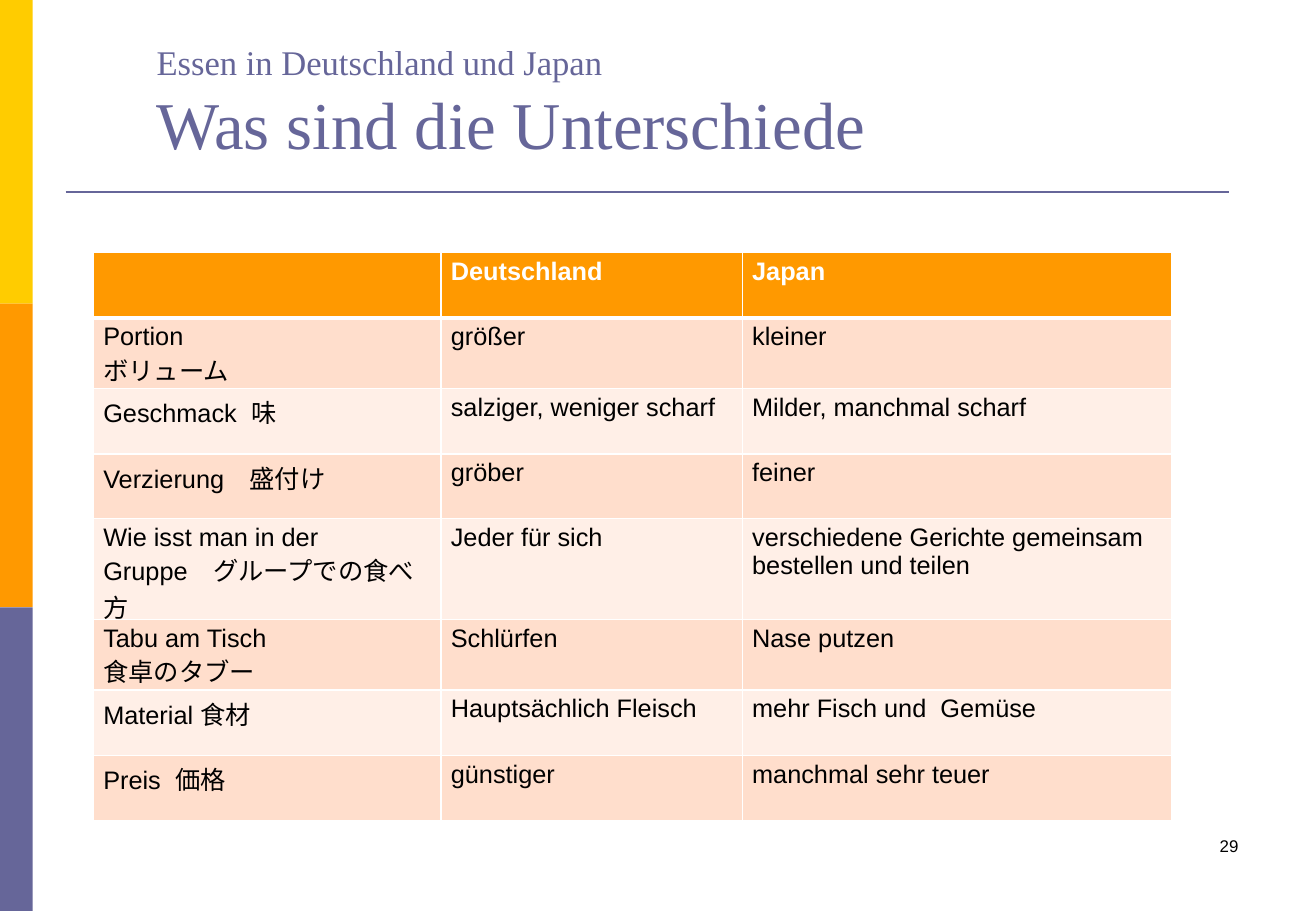
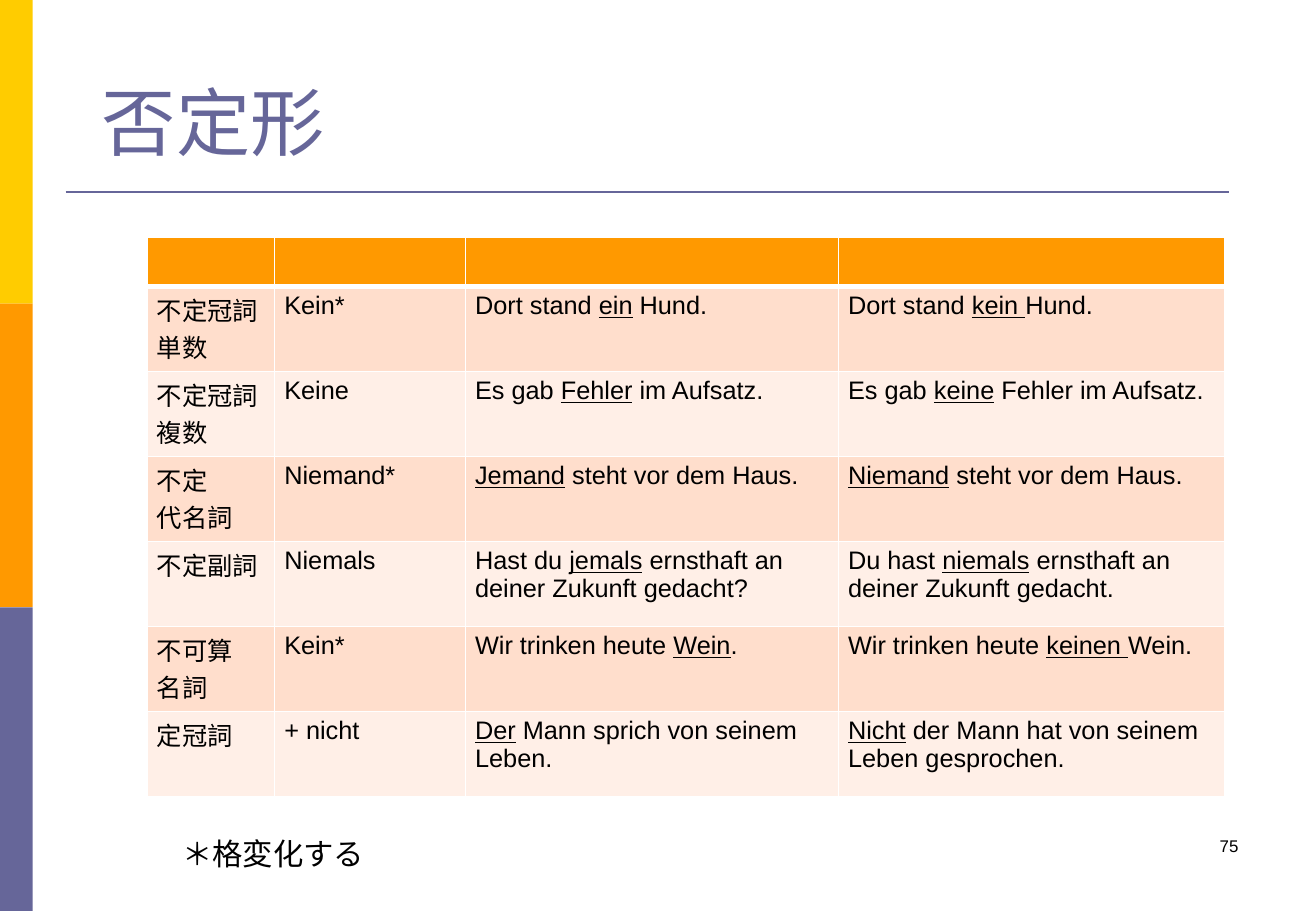
from lxml import etree
from pptx import Presentation
from pptx.dml.color import RGBColor
from pptx.enum import shapes, text
from pptx.oxml import ns
from pptx.util import Inches, Pt

COLORS = {
    "yellow": "FFCC00",
    "orange": "FF9900",
    "violet": "666699",
    "peach": "FFDECC",
    "cream": "FFEFE7",
    "white": "FFFFFF",
    "black": "000000",
}
BODY_FONT = "Arial"
BLANK_LAYOUT = 6
SLIDE_WIDTH, SLIDE_HEIGHT = 10.83, 7.5
BAND_WIDTH = 0.27

FOOD_ROWS = [
    ["", "Deutschland", "Japan"],
    ["Portion\nボリューム", "größer", "kleiner"],
    ["Geschmack  味", "salziger, weniger scharf", "Milder, manchmal scharf"],
    ["Verzierung　盛付け", "gröber", "feiner"],
    ["Wie isst man in der Gruppe　グループでの食べ方", "Jeder für sich",
     "verschiedene Gerichte gemeinsam bestellen und teilen"],
    ["Tabu am Tisch\n食卓のタブー", "Schlürfen", "Nase putzen"],
    ["Material 食材", "Hauptsächlich Fleisch", "mehr Fisch und  Gemüse"],
    ["Preis  価格", "günstiger", "manchmal sehr teuer"],
]

# Underscores enclose underlined words
NEGATION_ROWS = [
    ["", "", "", ""],
    ["不定冠詞単数", "Kein*", "Dort stand _ein_ Hund.", "Dort stand _kein _Hund."],
    ["不定冠詞複数", "Keine", "Es gab _Fehler_ im Aufsatz.",
     "Es gab _keine_ Fehler im Aufsatz."],
    ["不定\n代名詞", "Niemand*", "_Jemand_ steht vor dem Haus.",
     "_Niemand_ steht vor dem Haus."],
    ["不定副詞", "Niemals", "Hast du _jemals_ ernsthaft an deiner Zukunft gedacht?",
     "Du hast _niemals_ ernsthaft an deiner Zukunft gedacht."],
    ["不可算\n名詞", "Kein*", "Wir trinken heute _Wein_.",
     "Wir trinken heute _keinen _Wein."],
    ["定冠詞", "+ nicht", "_Der_ Mann sprich von seinem Leben.",
     "_Nicht_ der Mann hat von seinem Leben gesprochen."],
]


def rgb(name):
    return RGBColor.from_string(COLORS[name])


def style_font(font, color, size=None, name=BODY_FONT):
    font.name = name
    font.color.rgb = rgb(color)
    if size:
        font.size = Pt(size)


def add_text_box(page, box, anchor=text.MSO_ANCHOR.TOP):
    """Add a wrapping text box and return its first paragraph."""
    frame = page.shapes.add_textbox(*map(Inches, box)).text_frame
    frame.word_wrap = True
    frame.vertical_anchor = anchor
    return frame.paragraphs[0]


def add_background(page):
    # Three stacked bands on the left edge
    height = SLIDE_HEIGHT / 3
    for index, color in enumerate(("yellow", "orange", "violet")):
        band = page.shapes.add_shape(
            shapes.MSO_SHAPE.RECTANGLE, 0, Inches(index * height),
            Inches(BAND_WIDTH), Inches(height))
        band.shadow.inherit = False
        band.fill.solid()
        band.fill.fore_color.rgb = rgb(color)
        band.line.fill.background()

    # Rule below the title
    rule = page.shapes.add_connector(
        shapes.MSO_CONNECTOR.STRAIGHT,
        Inches(0.54), Inches(1.58), Inches(10.11), Inches(1.58))
    rule.line.color.rgb = rgb("violet")
    rule.line.width = Pt(1.5)
    etree.SubElement(rule._element.spPr, ns.qn("a:effectLst"))


def add_title(page, box, lines, font_name):
    """Lines are (wording, size) pairs in one paragraph."""
    para = add_text_box(page, box, text.MSO_ANCHOR.BOTTOM)
    style_font(para.font, "violet", name=font_name)
    for index, (wording, size) in enumerate(lines):
        if index:
            para.add_line_break()
        span = para.add_run()
        span.text = wording
        span.font.size = Pt(size)


def add_page_number(page, number):
    para = add_text_box(page, (7.76, 6.83, 2.53, 0.5))
    para.text = str(number)
    para.alignment = text.PP_ALIGN.RIGHT
    style_font(para.font, "black", 10)


def set_borders(cell, widths):
    properties = cell._tc.get_or_add_tcPr()
    for side, width in widths.items():
        line = etree.SubElement(
            properties, ns.qn(f"a:ln{side}"), w=str(Pt(width)))
        fill = etree.SubElement(line, ns.qn("a:solidFill"))
        etree.SubElement(fill, ns.qn("a:srgbClr"), val=COLORS["white"])


def fill_cell(cell, wording, row_index):
    header = row_index == 0
    set_borders(cell, {"L": 1, "R": 1, "T": 3 if row_index == 1 else 1,
                       "B": 3 if header else 1})
    cell.fill.solid()
    cell.fill.fore_color.rgb = rgb(
        "orange" if header else "peach" if row_index % 2 else "cream")
    cell.margin_left = cell.margin_right = Inches(0.08)
    cell.margin_top = cell.margin_bottom = Inches(0.04)
    if not wording:
        return

    for index, line in enumerate(wording.split("\n")):
        frame = cell.text_frame
        para = frame.add_paragraph() if index else frame.paragraphs[0]
        style_font(para.font, "white" if header else "black", 15)
        para.font.bold = header
        for position, part in enumerate(line.split("_")):
            if part:
                span = para.add_run()
                span.text = part
                if position % 2:
                    span.font.underline = True


def add_grid(page, left, top, columns, heights, rows):
    table = page.shapes.add_table(
        len(rows), len(columns), Inches(left), Inches(top),
        Inches(sum(columns)), Inches(sum(heights))).table
    for column, width in zip(table.columns, columns):
        column.width = Inches(width)
    for row_index, (row, height) in enumerate(zip(table.rows, heights)):
        row.height = Inches(height)
        for cell, wording in zip(row.cells, rows[row_index]):
            fill_cell(cell, wording, row_index)


def add_page(deck, number):
    page = deck.slides.add_slide(deck.slide_layouts[BLANK_LAYOUT])
    add_background(page)
    add_page_number(page, number)
    return page


def build_food_page(deck):
    page = add_page(deck, 29)
    add_title(page, (1.19, 0.43, 8.45, 0.96),
              [("Essen in Deutschland und Japan", 20.5),
               ("Was sind die Unterschiede", 39.6)], "Times New Roman")
    add_grid(page, 0.77, 2.08, [2.86, 2.48, 3.53],
             [0.54] * 3 + [0.53, 0.57] + [0.54] * 3, FOOD_ROWS)


def build_negation_page(deck):
    page = add_page(deck, 75)
    add_title(page, (0.74, 0.6, 9.34, 0.81), [("否定形", 44)], BODY_FONT)
    add_grid(page, 1.21, 1.95, [1.05, 1.57, 3.07, 3.18],
             [0.41] + [0.7] * 6, NEGATION_ROWS)

    # Footnote on declension
    note = add_text_box(page, (1.4, 6.83, 4.8, 0.4))
    note.text = "＊格変化する"
    style_font(note.font, "black", 18)


def main():
    deck = Presentation()
    deck.slide_width = Inches(SLIDE_WIDTH)
    deck.slide_height = Inches(SLIDE_HEIGHT)
    build_food_page(deck)
    build_negation_page(deck)
    deck.save("out.pptx")


if __name__ == "__main__":
    main()
